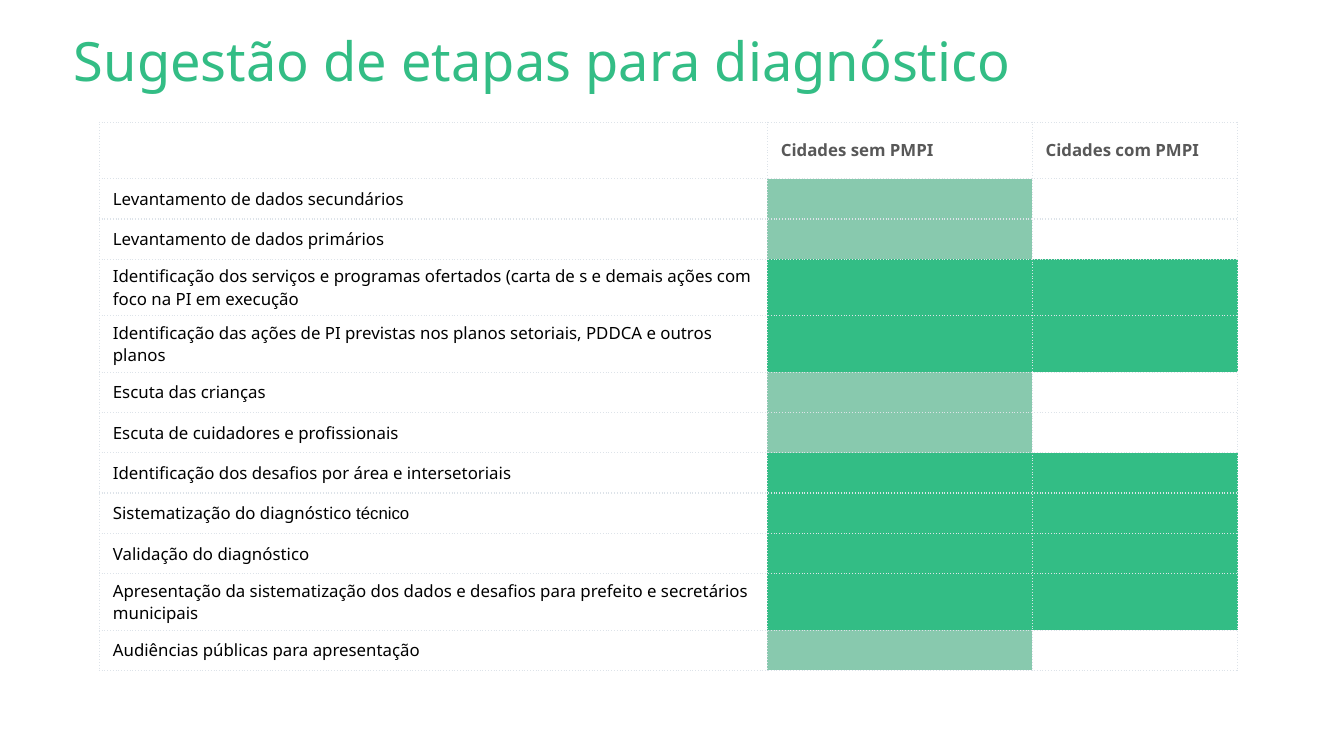
from dataclasses import dataclass

from lxml.etree import SubElement
from pptx import Presentation
from pptx.dml.color import RGBColor
from pptx.enum.text import MSO_ANCHOR
from pptx.oxml.ns import qn
from pptx.util import Inches, Pt


@dataclass(frozen=True)
class Theme:
    green: str = "33BD85"
    pale_green: str = "88C9AE"
    heading: str = "585858"
    body: str = "000000"
    border: str = "DDE3E9"
    font: str = "Noto Sans"
    alternate_font: str = "Arial"
    title_size: float = 29
    table_size: float = 9
    border_width: float = 0.75


THEME = Theme()
TITLE = "Sugestão de etapas para diagnóstico"
HEADINGS = ["", "Cidades sem PMPI", "Cidades com PMPI"]
COLUMN_WIDTHS = [4.97, 1.97, 1.53]
TALL_ROW, SHORT_ROW = 0.42, 0.3
ONE_LINE_LIMIT = 60  # longer steps wrap onto a second line

# Fills for the columns without and with a PMPI
BOTH = (THEME.green, THEME.green)
WITHOUT_ONLY = (THEME.pale_green, None)

STEPS = [
    ("Levantamento de dados secundários", WITHOUT_ONLY),
    ("Levantamento de dados primários", WITHOUT_ONLY),
    ("Identificação dos serviços e programas ofertados (carta de s e demais "
     "ações com foco na PI em execução", BOTH),
    ("Identificação das ações de PI previstas nos planos setoriais, PDDCA e "
     "outros planos", BOTH),
    ("Escuta das crianças", WITHOUT_ONLY),
    ("Escuta de cuidadores e profissionais", WITHOUT_ONLY),
    ("Identificação dos desafios por área e intersetoriais", BOTH),
    ("Sistematização do diagnóstico", BOTH),
    ("Validação do diagnóstico", BOTH),
    ("Apresentação da sistematização dos dados e desafios para prefeito e "
     "secretários municipais", BOTH),
    ("Audiências públicas para apresentação", WITHOUT_ONLY),
]
SUFFIXES = {"Sistematização do diagnóstico": " técnico"}


def add_span(para, text, *, size=THEME.table_size, color=THEME.body,
             font=THEME.font, bold=False):
    span = para.add_run()
    span.text = text
    span.font.size = Pt(size)
    span.font.name = font
    span.font.bold = bold
    span.font.color.rgb = RGBColor.from_string(color)


def add_title(page):
    box = page.shapes.add_textbox(Inches(0.55), Inches(0.26),
                                  Inches(9.01), Inches(0.44))
    frame = box.text_frame
    frame.word_wrap = True
    frame.margin_left = frame.margin_right = 0
    frame.margin_top = frame.margin_bottom = 0
    para = frame.paragraphs[0]
    para.line_spacing = 0.9
    add_span(para, TITLE, size=THEME.title_size, color=THEME.green)


def add_borders(cell):
    properties = cell._tc.get_or_add_tcPr()
    for side in ("a:lnL", "a:lnR", "a:lnT", "a:lnB"):
        line = SubElement(properties, qn(side), w=str(Pt(THEME.border_width)))
        fill = SubElement(line, qn("a:solidFill"))
        SubElement(fill, qn("a:srgbClr"), val=THEME.border)
        SubElement(line, qn("a:prstDash"), val="dot")


def format_cell(cell, fill=None):
    cell.vertical_anchor = MSO_ANCHOR.MIDDLE
    cell.margin_left = cell.margin_right = Inches(0.1)
    cell.margin_top = cell.margin_bottom = 0
    add_borders(cell)
    if fill:
        cell.fill.solid()
        cell.fill.fore_color.rgb = RGBColor.from_string(fill)
    else:
        cell.fill.background()


def write_cell(cell, text, **style):
    para = cell.text_frame.paragraphs[0]
    if text:
        add_span(para, text, **style)
    else:  # keeps an empty cell from stretching its row
        SubElement(para._p, qn("a:endParaRPr"), sz=str(int(THEME.table_size * 100)))
    return para


def add_steps_table(page):
    heights = [TALL_ROW] + [TALL_ROW if len(step) > ONE_LINE_LIMIT else SHORT_ROW
                            for step, _ in STEPS]
    table = page.shapes.add_table(
        len(heights), len(COLUMN_WIDTHS), Inches(0.74), Inches(0.91),
        Inches(sum(COLUMN_WIDTHS)), Inches(sum(heights))).table
    table.first_row = table.horz_banding = False
    for column, width in zip(table.columns, COLUMN_WIDTHS):
        column.width = Inches(width)
    for row, height in zip(table.rows, heights):
        row.height = Inches(height)

    for index, heading in enumerate(HEADINGS):
        cell = table.cell(0, index)
        format_cell(cell)
        write_cell(cell, heading, color=THEME.heading, bold=True)
    for row_index, (step, fills) in enumerate(STEPS, start=1):
        for index, fill in enumerate((None, *fills)):
            cell = table.cell(row_index, index)
            format_cell(cell, fill)
            para = write_cell(cell, "" if index else step)
            if index == 0 and step in SUFFIXES:
                add_span(para, SUFFIXES[step], font=THEME.alternate_font)


def main():
    deck = Presentation()
    deck.slide_width = Inches(10)
    deck.slide_height = deck.slide_width * 9 // 16
    page = deck.slides.add_slide(deck.slide_layouts[6])
    add_title(page)
    add_steps_table(page)
    deck.save("out.pptx")


if __name__ == "__main__":
    main()
